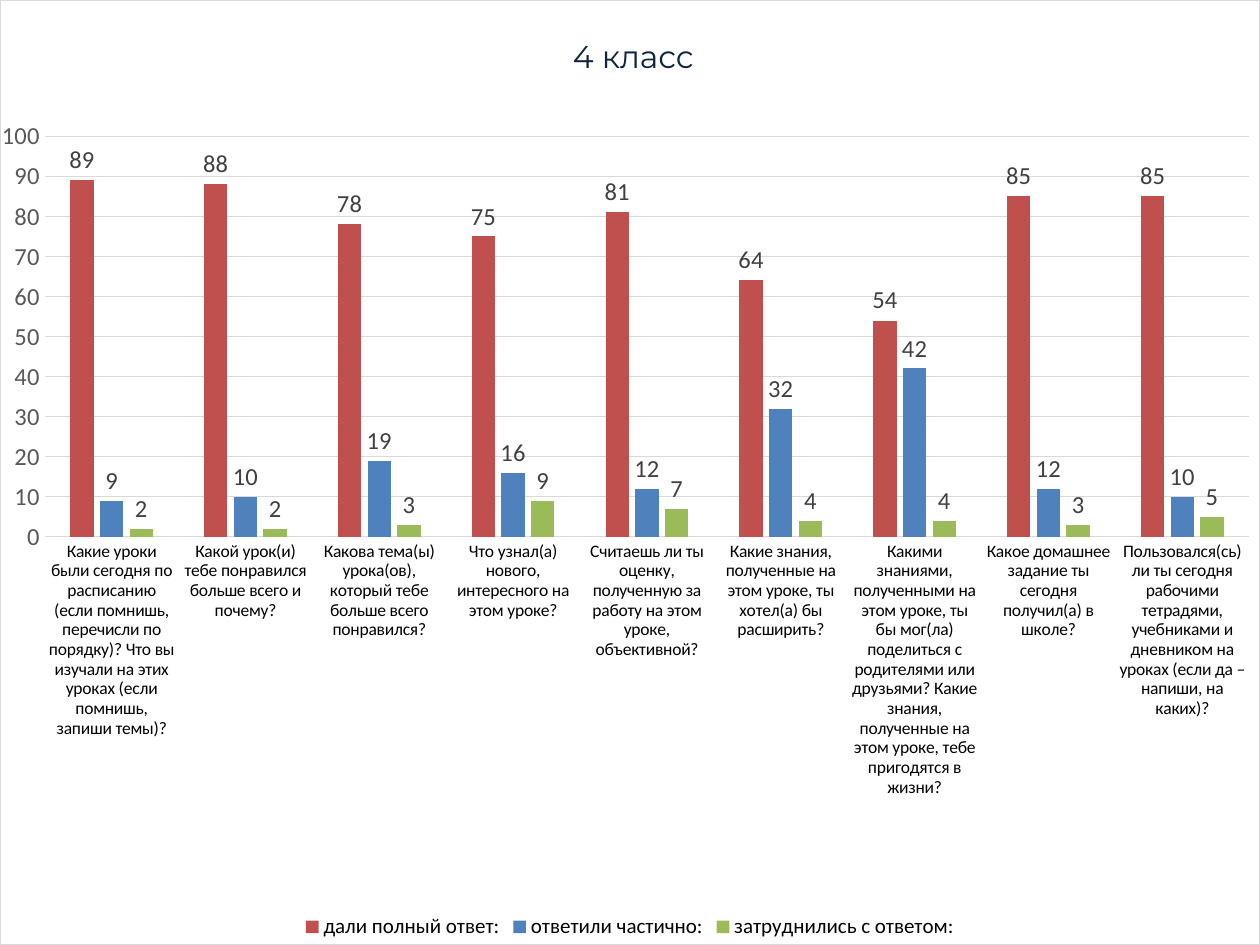
from dataclasses import dataclass
from typing import Optional

from lxml.etree import _Element
from pptx import Presentation
from pptx.chart.data import CategoryChartData
from pptx.dml.color import RGBColor
from pptx.enum.chart import (XL_CHART_TYPE, XL_LABEL_POSITION,
                             XL_LEGEND_POSITION, XL_TICK_MARK)
from pptx.oxml import parse_xml
from pptx.oxml.ns import nsdecls, qn
from pptx.text.text import Font
from pptx.util import Inches, Pt

BLACK = RGBColor(0x00, 0x00, 0x00)
WHITE = RGBColor(0xFF, 0xFF, 0xFF)
NAVY = RGBColor(0x0F, 0x24, 0x3E)
DARK_GREY = RGBColor(0x40, 0x40, 0x40)
GREY = RGBColor(0x59, 0x59, 0x59)
LIGHT_GREY = RGBColor(0xD9, 0xD9, 0xD9)
RED = RGBColor(0xC0, 0x50, 0x4D)
BLUE = RGBColor(0x4F, 0x81, 0xBD)
GREEN = RGBColor(0x9B, 0xBB, 0x59)


@dataclass
class Answer:
    name: str
    values: tuple[int, ...]
    color: RGBColor


QUESTIONS = (
    "Какие уроки были сегодня по расписанию (если помнишь, перечисли по порядку)? "
    "Что вы изучали на этих уроках (если помнишь, запиши темы)?",
    "Какой урок(и) тебе понравился больше всего и почему?",
    "Какова тема(ы) урока(ов), который тебе больше всего понравился?",
    "Что узнал(а) нового, интересного на этом уроке?",
    "Считаешь ли ты оценку, полученную за работу на этом уроке, объективной?",
    "Какие знания, полученные на этом уроке, ты хотел(а) бы расширить?",
    "Какими знаниями, полученными на этом уроке, ты бы мог(ла) поделиться с "
    "родителями или друзьями? Какие знания, полученные на этом уроке, тебе "
    "пригодятся в жизни?",
    "Какое домашнее задание ты сегодня получил(а) в школе?",
    "Пользовался(сь) ли ты сегодня рабочими тетрадями, учебниками и дневником "
    "на уроках (если да – напиши, на каких)?",
)
ANSWERS = (
    Answer("дали полный ответ:", (89, 88, 78, 75, 81, 64, 54, 85, 85), RED),
    Answer("ответили частично:", (9, 10, 19, 16, 12, 32, 42, 12, 10), BLUE),
    Answer("затруднились с ответом:", (2, 2, 3, 9, 7, 4, 4, 3, 5), GREEN),
)


def style_font(font: Font, size: int, color: RGBColor, name: str = "Calibri") -> None:
    font.size = Pt(size)
    font.bold = False
    font.name = name
    font.color.rgb = color


def set_layout(parent: _Element, index: int, x: float, y: float,
               w: Optional[float] = None, h: Optional[float] = None) -> None:
    """Place a chart part by shares of the chart's size."""
    for old in parent.findall(qn("c:layout")):
        parent.remove(old)
    target = '<c:layoutTarget val="inner"/>' if w else ""
    modes = '<c:xMode val="edge"/><c:yMode val="edge"/>'
    shares = "".join(f'<c:{tag} val="{val}"/>'
                     for tag, val in zip("xywh", (x, y, w, h)) if val is not None)
    parent.insert(index, parse_xml(
        f'<c:layout {nsdecls("c")}><c:manualLayout>{target}{modes}{shares}'
        '</c:manualLayout></c:layout>'))


def set_frame(chart_space: _Element, fill: RGBColor, border: RGBColor) -> None:
    """Fill and outline the whole chart area."""
    chart_space.find(qn("c:chart")).addnext(parse_xml(
        f'<c:spPr {nsdecls("c", "a")}>'
        f'<a:solidFill><a:srgbClr val="{fill}"/></a:solidFill>'
        f'<a:ln w="{Pt(0.75)}"><a:solidFill><a:srgbClr val="{border}"/>'
        '</a:solidFill></a:ln></c:spPr>'))


def main() -> None:
    prs = Presentation()
    prs.slide_width, prs.slide_height = Inches(10), Inches(7.5)
    s = prs.slides.add_slide(prs.slide_layouts[6])

    # Chart over the full slide
    data = CategoryChartData(number_format="General")
    data.categories = QUESTIONS
    for answer in ANSWERS:
        data.add_series(answer.name, answer.values)
    chart = s.shapes.add_chart(XL_CHART_TYPE.COLUMN_CLUSTERED, 0, 0,
                               prs.slide_width, prs.slide_height, data).chart
    style_font(chart.font, 14, BLACK)
    set_frame(chart.element, WHITE, LIGHT_GREY)

    # Title
    chart.has_title = True
    tf = chart.chart_title.text_frame
    tf.text = "4 класс"
    style_font(tf.paragraphs[0].runs[0].font, 18, NAVY, "Montserrat")
    chart.chart_title.include_in_layout = False
    set_layout(chart.chart_title.element if hasattr(chart.chart_title, "element")
               else chart.element.find(".//" + qn("c:title")), 1, 0.45, 0.03)

    # Columns and value labels
    plot = chart.plots[0]
    plot.vary_by_categories = False
    plot.gap_width, plot.overlap = 219, -27
    for series, answer in zip(plot.series, ANSWERS):
        series.format.fill.solid()
        series.format.fill.fore_color.rgb = answer.color
        labels = series.data_labels
        labels.show_value = True
        labels.position = XL_LABEL_POSITION.OUTSIDE_END
        style_font(labels.font, 14, DARK_GREY)
    set_layout(chart.element.find(".//" + qn("c:plotArea")), 0,
               0.035, 0.144, 0.957, 0.424)

    # Axes
    cat, val = chart.category_axis, chart.value_axis
    for axis, size, color in ((cat, 10, BLACK), (val, 14, GREY)):
        axis.major_tick_mark = axis.minor_tick_mark = XL_TICK_MARK.NONE
        style_font(axis.tick_labels.font, size, color)
    val.minimum_scale, val.maximum_scale, val.major_unit = 0, 100, 10
    val.format.line.fill.background()
    val.has_major_gridlines = True
    for line in (cat.format.line, val.major_gridlines.format.line):
        line.color.rgb = LIGHT_GREY
        line.width = Pt(0.75)

    # Legend
    chart.has_legend = True
    chart.legend.position = XL_LEGEND_POSITION.BOTTOM
    chart.legend.include_in_layout = False
    style_font(chart.legend.font, 12, BLACK)

    prs.save("out.pptx")


if __name__ == "__main__":
    main()
